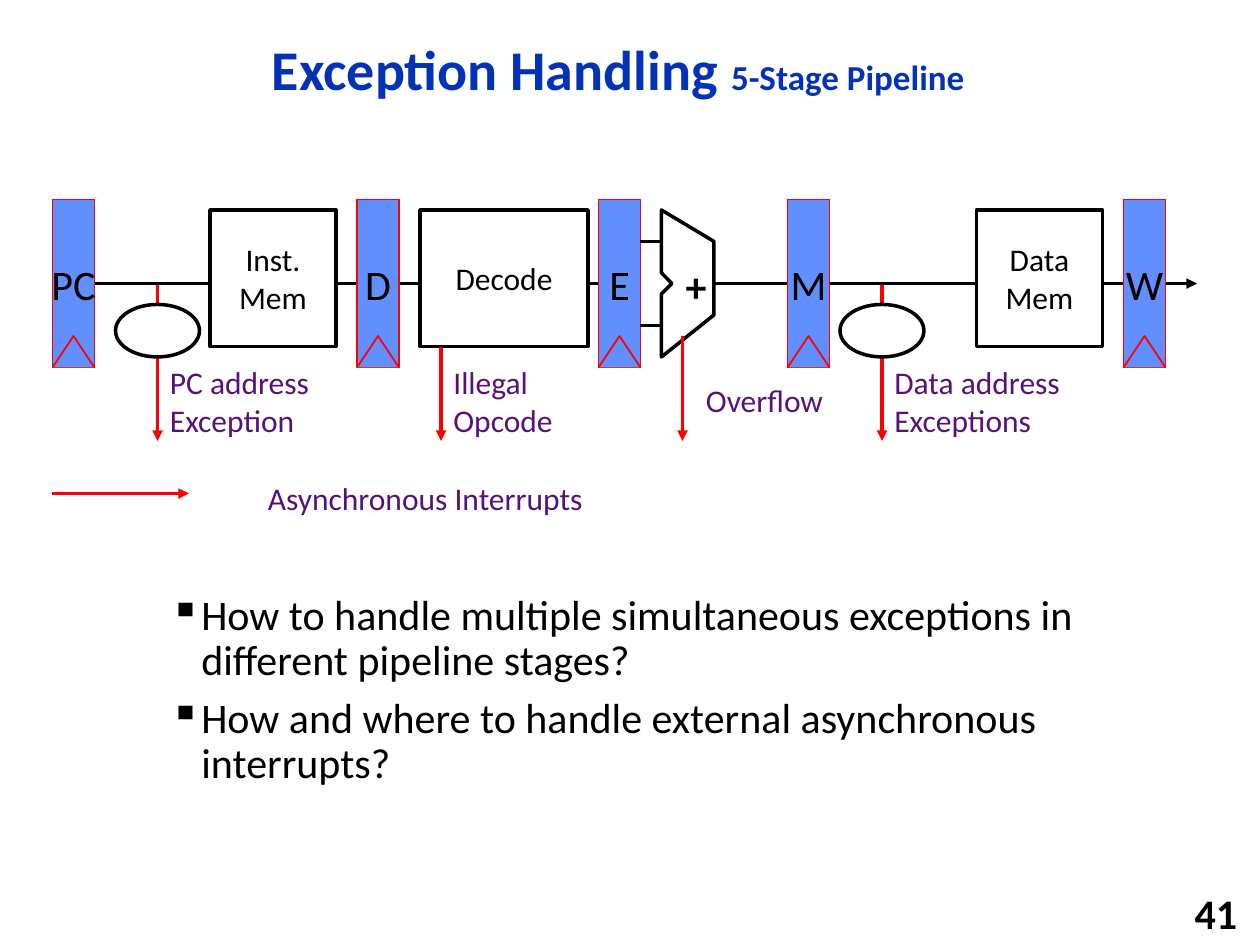
from pptx import Presentation, util as u
from pptx.dml.color import RGBColor
from pptx.enum import shapes, text
from pptx.oxml.ns import qn
from lxml import etree

PX = 9525
BLACK = RGBColor(0, 0, 0)
WHITE = RGBColor(255, 255, 255)
RED = RGBColor(255, 0, 0)
BLUE = RGBColor(0x61, 0x8F, 0xFD)
NAVY = RGBColor(0x03, 0x32, 0xB7)
PURPLE = RGBColor(0x56, 0x12, 0x7A)
LEFT, CENTER, RIGHT = text.PP_ALIGN.LEFT, text.PP_ALIGN.CENTER, text.PP_ALIGN.RIGHT
TOP, MIDDLE = text.MSO_ANCHOR.TOP, text.MSO_ANCHOR.MIDDLE
RECT, OVAL = shapes.MSO_SHAPE.RECTANGLE, shapes.MSO_SHAPE.OVAL


class Deck:
    font = "Calibri"

    def __init__(self, width, height):
        self.prs = Presentation()
        self.prs.slide_width, self.prs.slide_height = width * PX, height * PX
        self.s = self.prs.slides.add_slide(self.prs.slide_layouts[6])

    def style(self, p, size, color, bold=False, align=LEFT):
        p.alignment = align
        f = p.font
        f.name, f.bold, f.color.rgb = self.font, bold, color
        if size:
            f.size = u.Pt(size)

    def paint(self, sp, fill, line, width):
        sp.shadow.inherit = False
        sp.fill.solid()
        sp.fill.fore_color.rgb = fill
        sp.line.color.rgb = line
        sp.line.width = u.Pt(width)

    def label(self, box, words, size=18, color=PURPLE, bold=False, align=LEFT,
              anchor=MIDDLE, wrap=True):
        tf = self.s.shapes.add_textbox(*(v * PX for v in box)).text_frame
        tf.word_wrap, tf.vertical_anchor = wrap, anchor
        p = tf.paragraphs[0]
        p.text = words
        self.style(p, size, color, bold, align)

    def title(self, box, parts):
        tf = self.s.shapes.add_textbox(*(v * PX for v in box)).text_frame
        tf.word_wrap, tf.vertical_anchor = True, MIDDLE
        p = tf.paragraphs[0]
        p.line_spacing = 0.9
        self.style(p, None, NAVY, True, CENTER)
        for words, size in parts:
            r = p.add_run()
            r.text, r.font.size = words, u.Pt(size)

    def bullets(self, box, items):
        tf = self.s.shapes.add_textbox(*(v * PX for v in box)).text_frame
        tf.word_wrap = True
        for i, words in enumerate(items):
            p = tf.paragraphs[0] if i == 0 else tf.add_paragraph()
            p.text = words
            p.line_spacing, p.space_before = 0.9, u.Pt(7)
            self.style(p, 24, BLACK)
            pPr = p._p.get_or_add_pPr()
            pPr.set("marL", str(24 * PX))
            pPr.set("indent", str(-24 * PX))
            bu = etree.Element(qn("a:buChar"), char="▪")
            pPr.find(qn("a:defRPr")).addprevious(bu)

    def shape(self, kind, box, words="", size=18, fill=WHITE, line=BLACK,
              width=2, wrap=True):
        sp = self.s.shapes.add_shape(kind, *(v * PX for v in box))
        self.paint(sp, fill, line, width)
        if words:
            tf = sp.text_frame
            tf.word_wrap, tf.vertical_anchor = wrap, MIDDLE
            p = tf.paragraphs[0]
            p.text = words
            self.style(p, size, BLACK, align=CENTER)
        return sp

    def outline(self, points, fill, line, width, close):
        fb = self.s.shapes.build_freeform(*points[0], scale=PX)
        fb.add_line_segments(points[1:], close=close)
        self.paint(fb.convert_to_shape(), fill, line, width)

    def register(self, x, name):
        sp = self.shape(RECT, (x, 152, 32, 128), name, 24, BLUE, RED, 1, wrap=False)
        self.outline([(x, 280), (x + 16, 256), (x + 32, 280)], BLUE, RED, 1, False)
        return sp

    def line(self, x1, y1, x2, y2, color=BLACK, arrow=False):
        c = self.s.shapes.add_connector(shapes.MSO_CONNECTOR.STRAIGHT,
                                        *(v * PX for v in (x1, y1, x2, y2)))
        c.line.color.rgb, c.line.width = color, u.Pt(2)
        if arrow:
            etree.SubElement(c.line._get_or_add_ln(), qn("a:tailEnd"), type="triangle")
        etree.SubElement(c._element.spPr, qn("a:effectLst"))
        return c


def main():
    d = Deck(960, 720)
    d.title((88, 16, 766, 78), [("Exception Handling ", 32), ("5-Stage Pipeline", 20)])
    d.label((752, 680, 200, 31), "41", 24, BLACK, True, RIGHT, wrap=False)
    d.bullets((120, 448, 725, 192), [
        "How to handle multiple simultaneous exceptions in different pipeline stages?",
        "How and where to handle external asynchronous interrupts?",
    ])

    for x in (672, 120):
        d.line(x, 216, x, 336, RED, True)
    d.line(544, 216, 912, 216, arrow=True)
    front = d.line(56, 216, 456, 216)

    registers = {name: d.register(x, name) for name, x in
                 [("PC", 40), ("D", 272), ("E", 456), ("M", 600), ("W", 856)]}
    front.end_connect(registers["E"], 1)
    for x, w, name in [(160, 96, "Inst. Mem"), (320, 128, "Decode"), (744, 96, "Data Mem")]:
        d.shape(RECT, (x, 160, w, 104), name)

    d.outline([(504, 160), (504, 208), (512, 216), (504, 224), (504, 272),
               (544, 240), (544, 184)], WHITE, BLACK, 2, True)
    for y in (184, 248):
        d.line(488, y, 504, y)
    d.label((513, 200, 30, 36), "+", 24, BLACK, True, CENTER, wrap=False)

    for x in (640, 88):
        d.shape(OVAL, (x, 232, 64, 40))
    for x, w, words in [(336, 128, "Illegal Opcode"), (672, 192, "Data address Exceptions"),
                        (120, 169, "PC address Exception")]:
        d.label((x, 272, w, 67), words)
    d.label((528, 286, 109, 38), "Overflow", align=CENTER, wrap=False)
    d.label((152, 360, 344, 38), "Asynchronous Interrupts", align=CENTER, anchor=TOP)

    d.line(40, 376, 144, 376, RED, True)
    for x, y in [(336, 264), (520, 256)]:
        d.line(x, y, x, 336, RED, True)
    d.prs.save("out.pptx")


if __name__ == "__main__":
    main()
